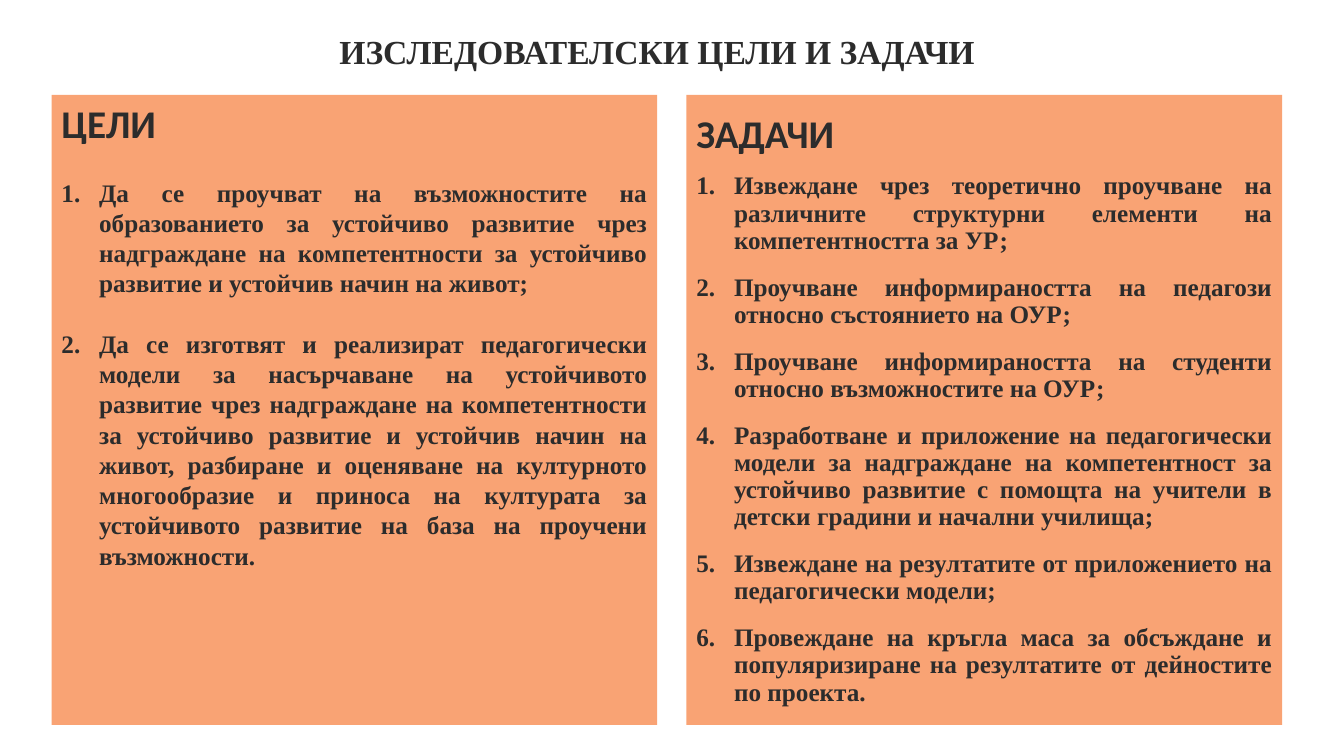
from dataclasses import dataclass
from lxml import etree
from pptx import Presentation
from pptx.dml.color import RGBColor
from pptx.enum.shapes import MSO_SHAPE
from pptx.enum.text import MSO_ANCHOR, PP_ALIGN
from pptx.oxml.ns import qn
from pptx.util import Cm, Pt

RECTANGLE = MSO_SHAPE.RECTANGLE
TOP, MIDDLE = MSO_ANCHOR.TOP, MSO_ANCHOR.MIDDLE
CENTER, JUSTIFY = PP_ALIGN.CENTER, PP_ALIGN.JUSTIFY

TITLE = "ИЗСЛЕДОВАТЕЛСКИ ЦЕЛИ И ЗАДАЧИ"
PANELS = [
    {
        "heading": "ЦЕЛИ", "left": 1.3, "width": 15.26,
        "heading_spacing": 1.0, "item_spacing": 1.0, "before": 21.6, "after": 0,
        "items": [
            "Да се проучват на възможностите на образованието за устойчиво развитие чрез надграждане на компетентности за устойчиво развитие и устойчив начин на живот;",
            "Да се изготвят и реализират педагогически модели за насърчаване на устойчивото развитие чрез надграждане на компетентности за устойчиво развитие и устойчив начин на живот, разбиране и оценяване на културното многообразие и приноса на културата за устойчивото развитие на база на проучени възможности.",
        ],
    },
    {
        "heading": "ЗАДАЧИ", "left": 17.3, "width": 15.01,
        "heading_spacing": 1.2, "item_spacing": 0.9, "before": 12, "after": 2,
        "items": [
            "Извеждане чрез теоретично проучване на различните структурни елементи на компетентността за УР;",
            "Проучване информираността на педагози относно състоянието на ОУР;",
            "Проучване информираността на студенти относно възможностите на ОУР;",
            "Разработване и приложение на педагогически модели за надграждане на компетентност за устойчиво развитие с помощта на учители в детски градини и начални училища;",
            "Извеждане на резултатите от приложението на педагогически модели;",
            "Провеждане на кръгла маса за обсъждане и популяризиране на резултатите от дейностите по проекта.",
        ],
    },
]
PANEL_TOP, PANEL_HEIGHT = Cm(2.39), Cm(15.88)
INDENT = Cm(0.95)


@dataclass(frozen=True)
class Theme:
    ink: RGBColor = RGBColor(0x2C, 0x2C, 0x2C)
    panel: RGBColor = RGBColor(0xF9, 0xA3, 0x74)
    serif: str = "Times New Roman"
    sans: str = "Calibri"
    title_size: int = 24
    heading_size: int = 28
    item_size: int = 18


THEME = Theme()


def write(para, text, font, size, align, spacing, before=0, after=0):
    para.text = text
    para.alignment = align
    para.line_spacing = spacing
    para.space_before, para.space_after = Pt(before), Pt(after)
    para.font.name, para.font.size = font, Pt(size)
    para.font.bold = True
    para.font.color.rgb = THEME.ink


def number(para):
    properties = para._p.get_or_add_pPr()
    properties.set("marL", str(INDENT))
    properties.set("indent", str(-INDENT))
    bullet = etree.Element(qn("a:buAutoNum"), type="arabicPeriod")
    properties.find(qn("a:defRPr")).addprevious(bullet)


def add_title(page):
    box = page.shapes.add_textbox(Cm(2.97), Cm(0.33), Cm(27.18), Cm(2.06))
    frame = box.text_frame
    frame.word_wrap = True
    frame.vertical_anchor = MIDDLE
    write(frame.paragraphs[0], TITLE, THEME.serif, THEME.title_size, CENTER, 0.85)


def add_panel(page, panel):
    box = page.shapes.add_shape(
        RECTANGLE, Cm(panel["left"]), PANEL_TOP, Cm(panel["width"]), PANEL_HEIGHT)
    box.shadow.inherit = False
    box.fill.solid()
    box.fill.fore_color.rgb = THEME.panel
    box.line.fill.background()
    frame = box.text_frame
    frame.word_wrap = True
    frame.vertical_anchor = TOP
    write(frame.paragraphs[0], panel["heading"], THEME.sans, THEME.heading_size,
          JUSTIFY, panel["heading_spacing"])
    for item in panel["items"]:
        para = frame.add_paragraph()
        write(para, item, THEME.serif, THEME.item_size, JUSTIFY,
              panel["item_spacing"], panel["before"], panel["after"])
        number(para)


def main():
    deck = Presentation()
    deck.slide_width, deck.slide_height = Cm(33.87), Cm(19.05)
    page = deck.slides.add_slide(deck.slide_layouts[6])
    add_title(page)
    for panel in PANELS:
        add_panel(page, panel)
    deck.save("out.pptx")


if __name__ == "__main__":
    main()
